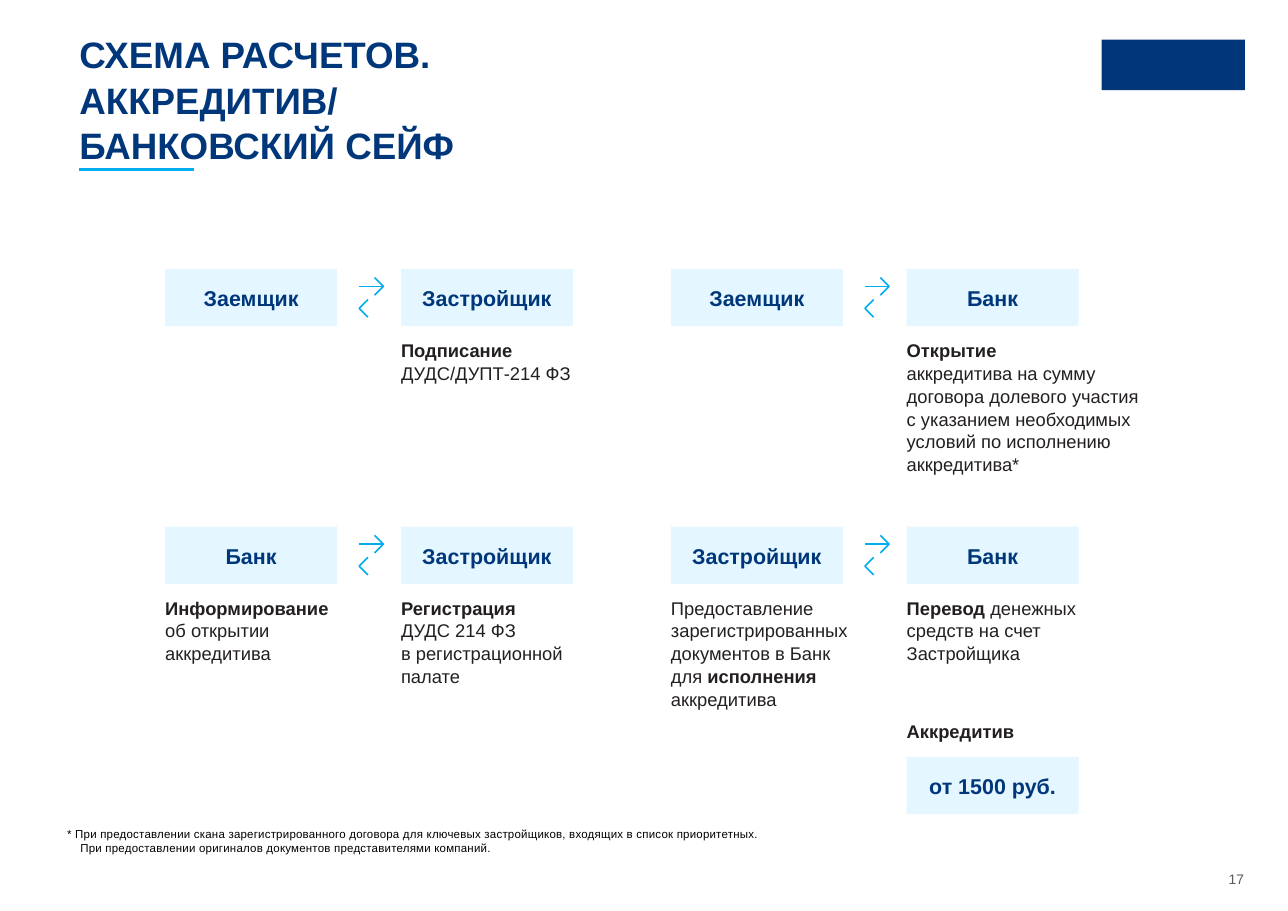
from lxml.etree import SubElement
from pptx import Presentation
from pptx.dml.color import RGBColor
from pptx.enum.shapes import MSO_CONNECTOR, MSO_SHAPE
from pptx.enum.text import MSO_ANCHOR, PP_ALIGN
from pptx.oxml.ns import qn
from pptx.util import Inches, Pt

NAVY, SKY, PALE, INK = "00377B", "00AEEF", "E4F6FF", "231F20"
CELL = Inches(0.01)


def paint(colour_format, colour):
    colour_format.rgb = RGBColor.from_string(colour)


def write(frame, lines, size, colour, bold=False, align=PP_ALIGN.LEFT, anchor=MSO_ANCHOR.TOP):
    frame.margin_left = frame.margin_top = frame.margin_right = frame.margin_bottom = 0
    frame.word_wrap = True
    frame.vertical_anchor = anchor
    paragraph = frame.paragraphs[0]
    paragraph.alignment = align
    paragraph.line_spacing = 1.04
    paragraph.font.name = "Arial"
    paragraph.font.size = Pt(size)
    paragraph.font.bold = bold
    paint(paragraph.font.color, colour)
    for number, line in enumerate(lines):
        if number:
            paragraph.add_line_break()
        for part, words in enumerate(line.split("|")):
            if words:
                run = paragraph.add_run()
                run.text = words
                if part % 2:
                    run.font.bold = True
    return paragraph


deck = Presentation()
deck.slide_width, deck.slide_height = 1169 * CELL, 827 * CELL
slide = deck.slides.add_slide(deck.slide_layouts[5])
shapes = slide.shapes

title = shapes.title
title.left, title.top, title.width, title.height = 72 * CELL, 27 * CELL, 500 * CELL, 122 * CELL
write(title.text_frame, ["СХЕМА РАСЧЕТОВ.", "АККРЕДИТИВ/", "БАНКОВСКИЙ СЕЙФ"], 24, NAVY, bold=True)

emblem = shapes.add_shape(MSO_SHAPE.RECTANGLE, 1000 * CELL, 36 * CELL, 130 * CELL, 46 * CELL)
emblem.shadow.inherit = False
emblem.fill.solid()
paint(emblem.fill.fore_color, NAVY)
emblem.line.fill.background()

LEFT_COLUMNS = (150, 609)
PARTNER_STEP = 214
ROWS = (244, 478)
BOX_WIDTH, BOX_HEIGHT = 156, 52
NOTE_DROP = 63
partners = [
    [("Заемщик", "Застройщик"), ("Заемщик", "Банк")],
    [("Банк", "Застройщик"), ("Застройщик", "Банк")],
]

boxes = [(LEFT_COLUMNS[1] + PARTNER_STEP, 687, "от 1500 руб.")]
rules = [(72, 154, 104, 2)]
for row, pairs in zip(ROWS, partners):
    for column, pair in zip(LEFT_COLUMNS, pairs):
        boxes += [(column + side * PARTNER_STEP, row, party) for side, party in enumerate(pair)]
        arrow_left, arrow_right = column + 176, column + 198
        rules.append((arrow_left, row + 16, 22, 1))
        for tip, direction, middle in ((arrow_right, -1, row + 16), (arrow_left, 1, row + 36)):
            tail = tip + 8 * direction
            outline = shapes.build_freeform(tail * CELL, (middle - 8) * CELL)
            outline.add_line_segments(
                [(tip * CELL, middle * CELL), (tail * CELL, (middle + 8) * CELL)], close=False)
            arrowhead = outline.convert_to_shape()
            arrowhead.shadow.inherit = False
            arrowhead.fill.background()
            arrowhead.line.width = Pt(1)
            paint(arrowhead.line.color, SKY)

for left, top, length, weight in rules:
    rule = shapes.add_connector(
        MSO_CONNECTOR.STRAIGHT, left * CELL, top * CELL, (left + length) * CELL, top * CELL)
    rule.line.width = Pt(weight)
    paint(rule.line.color, SKY)
    SubElement(rule._element.spPr, qn("a:effectLst"))

for left, top, party in boxes:
    box = shapes.add_shape(
        MSO_SHAPE.RECTANGLE, left * CELL, top * CELL, BOX_WIDTH * CELL, BOX_HEIGHT * CELL)
    box.shadow.inherit = False
    box.fill.solid()
    paint(box.fill.fore_color, PALE)
    box.line.fill.background()
    write(box.text_frame, [party], 14, NAVY, True, PP_ALIGN.CENTER, MSO_ANCHOR.MIDDLE)

borrower, builder = LEFT_COLUMNS[0], LEFT_COLUMNS[0] + PARTNER_STEP
sender, bank = LEFT_COLUMNS[1], LEFT_COLUMNS[1] + PARTNER_STEP
upper, lower = (row + NOTE_DROP for row in ROWS)
notes = [
    (builder, upper, ["|Подписание|", "ДУДС/ДУПТ-214 ФЗ"]),
    (bank, upper, ["|Открытие|", "аккредитива на сумму", "договора долевого участия",
                   "с указанием необходимых", "условий по исполнению", "аккредитива*"]),
    (borrower, lower, ["|Информирование|", "об открытии", "аккредитива"]),
    (builder, lower, ["|Регистрация|", "ДУДС 214 ФЗ", "в регистрационной", "палате"]),
    (sender, lower, ["Предоставление", "зарегистрированных", "документов в Банк",
                     "для |исполнения|", "аккредитива"]),
    (bank, lower, ["|Перевод| денежных", "средств на счет", "Застройщика"]),
    (bank, 653, ["|Аккредитив|"]),
]
for left, top, lines in notes:
    note = shapes.add_textbox(left * CELL, top * CELL, 230 * CELL, 20 * len(lines) * CELL)
    write(note.text_frame, lines, 12, INK)

footnote = shapes.add_textbox(60 * CELL, 750 * CELL, 700 * CELL, 27 * CELL)
conditions = write(footnote.text_frame, [
    "* При предоставлении скана зарегистрированного договора для ключевых застройщиков, "
    "входящих в список приоритетных.",
    "При предоставлении оригиналов документов представителями компаний.",
], 7.5, "000000")
indents = conditions._p.get_or_add_pPr()
indents.set("marL", str(13 * CELL))
indents.set("indent", str(-12 * CELL))
for run in conditions.runs:
    run._r.get_or_add_rPr().set("spc", "10")

page_number = shapes.add_textbox(1100 * CELL, 790 * CELL, 29 * CELL, 17 * CELL)
write(page_number.text_frame, ["17"], 9, "58595B", align=PP_ALIGN.RIGHT)

deck.save("out.pptx")
